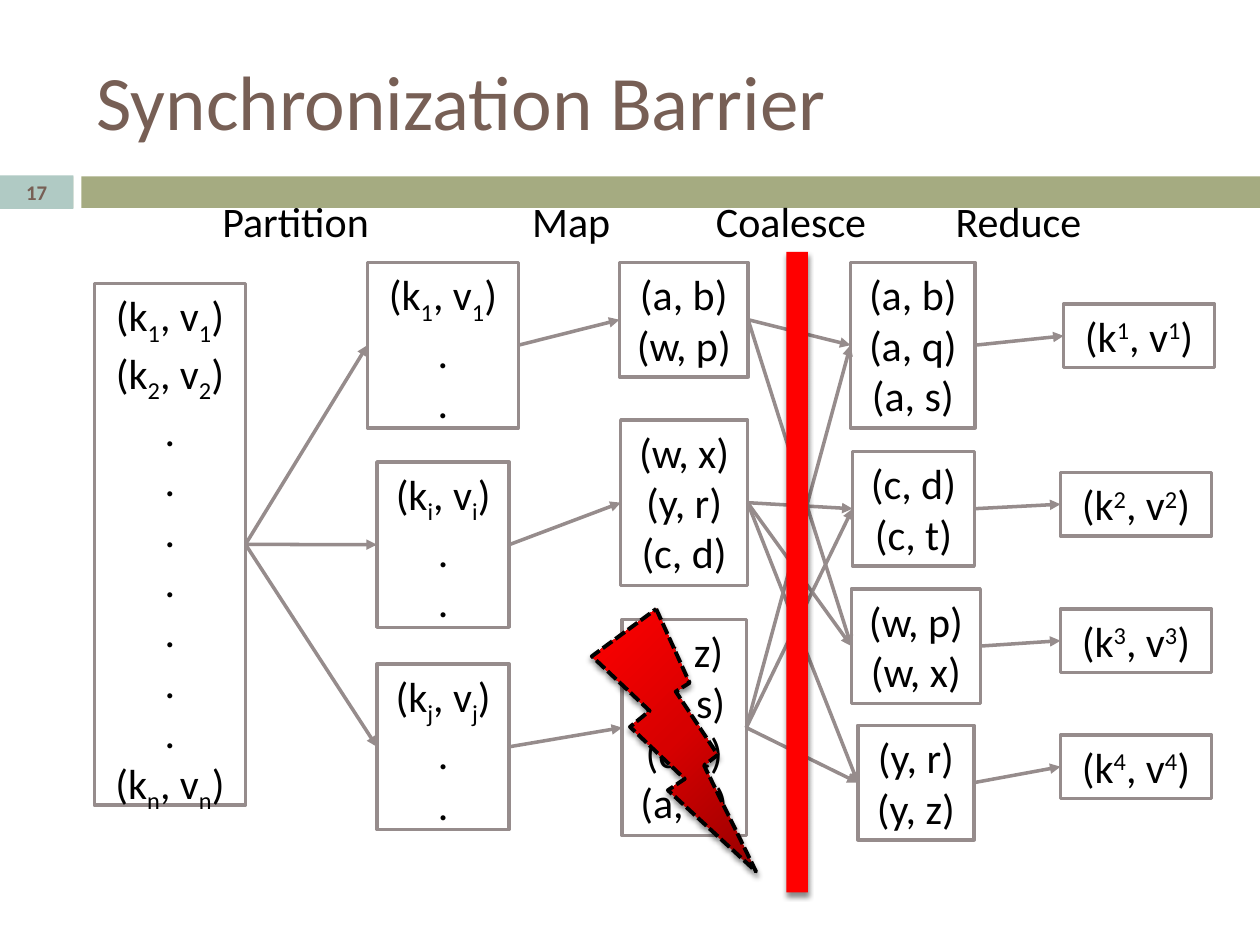
"""Build the Synchronization Barrier slide: a map-reduce data flow with a failed mapper."""
from lxml.etree import SubElement
from pptx import Presentation
from pptx.dml.color import RGBColor as RGB
from pptx.enum.dml import MSO_LINE
from pptx.enum.shapes import MSO_CONNECTOR, MSO_SHAPE
from pptx.enum.text import MSO_ANCHOR, MSO_AUTO_SIZE, PP_ALIGN
from pptx.oxml import parse_xml
from pptx.oxml.ns import nsdecls, qn
from pptx.util import Pt


class Theme:
    font = "Calibri"
    title_size, body_size, number_size = Pt(44), Pt(24), Pt(11.9)
    title, text, line = RGB(0x77, 0x5F, 0x55), RGB(0, 0, 0), RGB(0x96, 0x8C, 0x8C)
    band, band_left, number = RGB(0xA5, 0xAB, 0x81), RGB(0xC9, 0xCD, 0xB3), RGB(0xB0, 0xCA, 0xC4)
    barrier = RGB(0xFF, 0, 0)
    bolt = ((0, "970000"), (50, "D70000"), (100, "FF0000"))


def style(r, size, color):
    r.font.name, r.font.size, r.font.color.rgb = Theme.font, size, color


def add_text(s, x, y, w, lines, align):
    sp = s.shapes.add_textbox(Pt(x), Pt(y), Pt(w), Pt(7.2 + 29.1 * len(lines)))
    tf = sp.text_frame
    tf.word_wrap = False
    tf.auto_size = MSO_AUTO_SIZE.SHAPE_TO_FIT_TEXT
    for i, line in enumerate(lines):
        p = tf.paragraphs[0] if i == 0 else tf.add_paragraph()
        p.alignment = align
        for part in line.split("|"):
            r = p.add_run()
            r.text = part.lstrip("_^")
            style(r, Theme.body_size, Theme.text)
            if part[0] in "_^":
                r.font._element.set("baseline", "-25000" if part[0] == "_" else "30000")
    return sp


prs = Presentation()
prs.slide_width, prs.slide_height = Pt(720), Pt(540)
s = prs.slides.add_slide(prs.slide_layouts[5])

title = s.shapes.title
title.left, title.top, title.width, title.height = Pt(48), Pt(18), Pt(642), Pt(78)
tf = title.text_frame
tf.text = "Synchronization Barrier"
tf.vertical_anchor = MSO_ANCHOR.MIDDLE
tf.paragraphs[0].alignment = PP_ALIGN.LEFT
style(tf.paragraphs[0].runs[0], Theme.title_size, Theme.title)

for x, y, w, h, color in (
    (0, 100.8, 42, 18, Theme.band_left),
    (46.5, 100.8, 673.5, 18, Theme.band),
    (0, 100.2, 42, 19.2, Theme.number),
):
    band = s.shapes.add_shape(MSO_SHAPE.RECTANGLE, Pt(x), Pt(y), Pt(w), Pt(h))
    band.shadow.inherit = False
    band.fill.solid()
    band.fill.fore_color.rgb = color
    band.line.fill.background()

tf = band.text_frame
tf.margin_top = tf.margin_bottom = 0
tf.vertical_anchor = MSO_ANCHOR.MIDDLE
tf.text = "17"
tf.paragraphs[0].alignment = PP_ALIGN.CENTER
r = tf.paragraphs[0].runs[0]
style(r, Theme.number_size, Theme.title)
r.font.bold = True

sub, sup = "(k|_{0}|, v|_{0}|)", "(k|^{0}|, v|^{0}|)"
boxes = {
    "input": (54, 162, 86.3, [sub.format(1), sub.format(2)] + ["."] * 7 + [sub.format("n")]),
    "part1": (210, 150, 86.3, [sub.format(1), ".", "."]),
    "part2": (215.4, 264, 75.6, [sub.format("i"), ".", "."]),
    "part3": (215.4, 379.5, 75.6, [sub.format("j"), ".", "."]),
    "map1": (354, 150, 73.5, ["(a, b)", "(w, p)"]),
    "map2": (354.7, 240, 72.5, ["(w, x)", "(y, r)", "(c, d)"]),
    "map3": (355.5, 354, 71, ["(y, z)", "(a, s)", "(c, t)", "(a, q)"]),
    "group1": (486, 150, 71.3, ["(a, b)", "(a, q)", "(a, s)"]),
    "group2": (487.2, 258, 69.6, ["(c, d)", "(c, t)"]),
    "group3": (486.5, 336.5, 73.7, ["(w, p)", "(w, x)"]),
    "group4": (490.2, 414.5, 66.5, ["(y, r)", "(y, z)"]),
    "out1": (607.8, 173.8, 86.3, [sup.format(1)]),
    "out2": (606, 270, 86.3, [sup.format(2)]),
    "out3": (606, 348, 86.3, [sup.format(3)]),
    "out4": (606, 420, 86.3, [sup.format(4)]),
}
nodes = {}
for name, (x, y, w, lines) in boxes.items():
    sp = add_text(s, x, y, w, lines, PP_ALIGN.CENTER)
    sp.line.color.rgb = Theme.line
    sp.line.width = Pt(2)
    nodes[name] = sp

for label, x, w in (
    ("Partition", 120, 113), ("Map", 297, 63.4), ("Coalesce", 402, 121), ("Reduce", 539, 102.2),
):
    add_text(s, x, 108, w, [label], PP_ALIGN.LEFT)

flows = {
    "input": "part1 part2 part3",
    "part1": "map1", "part2": "map2", "part3": "map3",
    "map1": "group1 group3",
    "map2": "group2 group3 group4",
    "map3": "group2 group4 group1",
    "group1": "out1", "group2": "out2", "group3": "out3", "group4": "out4",
}
for source, targets in flows.items():
    for target in targets.split():
        arrow = s.shapes.add_connector(MSO_CONNECTOR.STRAIGHT, 0, 0, 0, 0)
        arrow.begin_connect(nodes[source], 3)
        arrow.end_connect(nodes[target], 1)
        arrow.line.color.rgb = Theme.line
        arrow.line.width = Pt(2)
        SubElement(arrow.line._get_or_add_ln(), qn("a:tailEnd"), type="triangle")
        SubElement(arrow._element.spPr, qn("a:effectLst"))

barrier = s.shapes.add_shape(MSO_SHAPE.RECTANGLE, Pt(449.3), Pt(144), Pt(12.4), Pt(366))
barrier.fill.solid()
barrier.fill.fore_color.rgb = Theme.barrier
barrier.line.fill.background()

bolt = s.shapes.add_shape(MSO_SHAPE.LIGHTNING_BOLT, Pt(338.2), Pt(348), Pt(93.8), Pt(150))
bolt.line.color.rgb = Theme.text
bolt.line.width = Pt(2.25)
bolt.line.dash_style = MSO_LINE.SQUARE_DOT
stops = "".join(
    f'<a:gs pos="{pos * 1000}"><a:srgbClr val="{color}"/></a:gs>' for pos, color in Theme.bolt
)
bolt._element.spPr.find(qn("a:prstGeom")).addnext(parse_xml(
    f'<a:gradFill {nsdecls("a")} rotWithShape="1"><a:gsLst>{stops}</a:gsLst>'
    f'<a:lin ang="{225 * 60000}" scaled="0"/></a:gradFill>'
))

for sp in (barrier, bolt):
    sp._element.spPr.append(parse_xml(
        f'<a:effectLst {nsdecls("a")}><a:outerShdw blurRad="{Pt(3)}" dist="{Pt(2.4)}" '
        f'dir="{90 * 60000}" rotWithShape="0"><a:srgbClr val="000000">'
        '<a:alpha val="45000"/></a:srgbClr></a:outerShdw></a:effectLst>'
    ))

prs.save("out.pptx")
